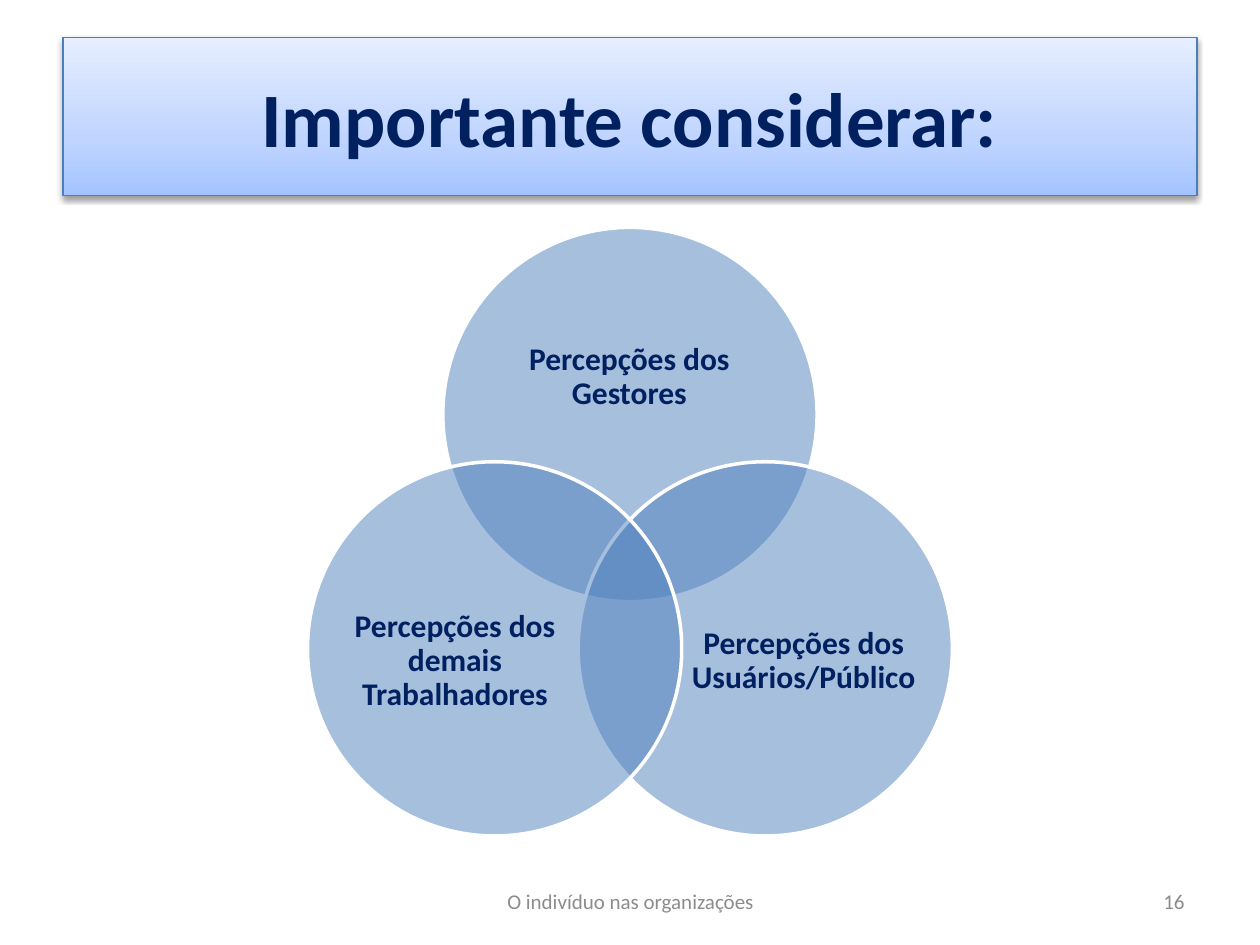
from copy import deepcopy
from math import cos, radians, sin

from lxml import etree
from pptx import Presentation
from pptx.dml.color import RGBColor
from pptx.enum.shapes import MSO_SHAPE
from pptx.enum.text import MSO_ANCHOR, PP_ALIGN
from pptx.oxml import parse_xml
from pptx.oxml.ns import nsdecls, qn
from pptx.util import Inches, Pt

RECTANGLE, OVAL = MSO_SHAPE.RECTANGLE, MSO_SHAPE.OVAL
MIDDLE = MSO_ANCHOR.MIDDLE
CENTER, RIGHT = PP_ALIGN.CENTER, PP_ALIGN.RIGHT

NAVY = RGBColor(0x00, 0x20, 0x60)
BLUE = RGBColor(0x4F, 0x81, 0xBD)
BORDER = RGBColor(0x4B, 0x7E, 0xBC)
GRAY = RGBColor(0x8C, 0x8C, 0x8C)
WHITE = RGBColor(0xFF, 0xFF, 0xFF)
TITLE_GRADIENT = [
    (0, RGBColor(0xA4, 0xC4, 0xFF)),
    (0.35, RGBColor(0xBF, 0xD4, 0xFF)),
    (1, RGBColor(0xE6, 0xEE, 0xFF)),
]

CIRCLES = [
    ("Percepções dos Gestores", -90, (0.39, 0.52, 2.18, 1.34)),
    ("Percepções dos Usuários/Público", 30, (0.9, 0.77, 1.78, 1.63)),
    ("Percepções dos demais Trabalhadores", 150, (0.28, 0.77, 1.78, 1.63)),
]


def inches(*lengths):
    return [Inches(length) for length in lengths]


def write_text(shape, text, size, color, bold=False, align=CENTER,
               line_spacing=None, margin=None):
    frame = shape.text_frame
    frame.word_wrap = True
    frame.vertical_anchor = MIDDLE
    if margin is not None:
        frame.margin_left = frame.margin_right = margin
        frame.margin_top = frame.margin_bottom = margin
    paragraph = frame.paragraphs[0]
    paragraph.alignment = align
    paragraph.line_spacing = line_spacing
    run = paragraph.add_run()
    run.text = text
    run.font.name = "Calibri"
    run.font.size = Pt(size)
    run.font.bold = bold
    run.font.color.rgb = color


def fill_gradient(shape, stops):
    shape.fill.gradient()
    shape.fill.gradient_angle = 90
    stop_list = shape.element.spPr.find(".//" + qn("a:gsLst"))
    stop_list.append(deepcopy(stop_list[-1]))
    for stop, (position, color) in zip(shape.fill.gradient_stops, stops):
        stop.position = position
        stop.color.rgb = color


def add_drop_shadow(shape):
    shape.shadow.inherit = False
    effects = shape.element.spPr.find(qn("a:effectLst"))
    effects.append(parse_xml(
        f'<a:outerShdw {nsdecls("a")} blurRad="{Pt(3.1)}" dist="{Pt(1.6)}" '
        'dir="5400000" rotWithShape="0"><a:srgbClr val="000000">'
        '<a:alpha val="38000"/></a:srgbClr></a:outerShdw>'))


def add_title(slide, left, top, width, height):
    banner = slide.shapes.add_shape(RECTANGLE, *inches(left, top, width, height))
    fill_gradient(banner, TITLE_GRADIENT)
    banner.line.color.rgb = BORDER
    banner.line.width = Pt(0.75)
    add_drop_shadow(banner)
    write_text(banner, "Importante considerar:", 44, NAVY, bold=True)


def add_circle(shapes, left, top, diameter):
    circle = shapes.add_shape(OVAL, *inches(left, top, diameter, diameter))
    circle.shadow.inherit = False
    circle.fill.solid()
    circle.fill.fore_color.rgb = BLUE
    color = circle.element.spPr.find(qn("a:solidFill"))[0]
    etree.SubElement(color, qn("a:alpha"), val="50000")
    circle.line.color.rgb = WHITE
    circle.line.width = Pt(2)


def add_venn(slide, center_x, center_y, orbit, diameter):
    shapes = slide.shapes.add_group_shape().shapes
    for text, angle, (offset_x, offset_y, width, height) in CIRCLES:
        left = center_x + orbit * cos(radians(angle)) - diameter / 2
        top = center_y + orbit * sin(radians(angle)) - diameter / 2
        add_circle(shapes, left, top, diameter)
        label = shapes.add_textbox(
            *inches(left + offset_x, top + offset_y, width, height))
        write_text(label, text, 18, NAVY, bold=True, line_spacing=0.9, margin=0)


def add_footer(slide, top, height):
    for text, left, width, align in [
        ("O indivíduo nas organizações", 3.42, 3.17, CENTER),
        ("16", 7.17, 2.33, RIGHT),
    ]:
        box = slide.shapes.add_textbox(*inches(left, top, width, height))
        write_text(box, text, 12, GRAY, align=align)


def main():
    presentation = Presentation()
    presentation.slide_width = Inches(10)
    presentation.slide_height = Inches(7.5)
    slide = presentation.slides.add_slide(presentation.slide_layouts[6])
    add_title(slide, 0.5, 0.3, 9, 1.25)
    add_venn(slide, center_x=5, center_y=4.53, orbit=1.24, diameter=2.97)
    add_footer(slide, 6.95, 0.4)
    presentation.save("out.pptx")


if __name__ == "__main__":
    main()
